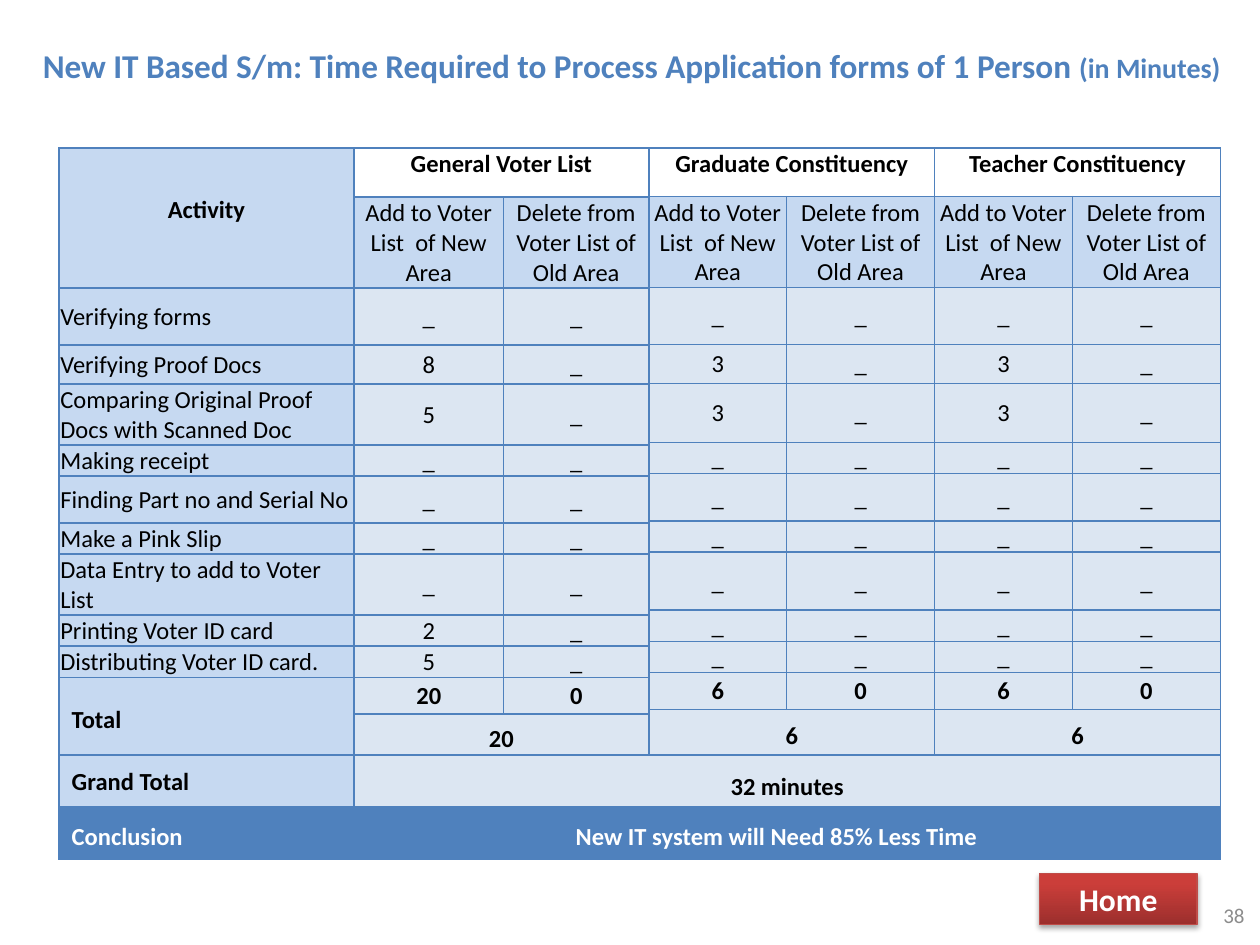
import pptx
import pptx.util
import pptx.dml.color
import pptx.enum.shapes
import pptx.enum.text
import pptx.oxml
import pptx.oxml.ns

Pt = pptx.util.Pt
ALIGN = pptx.enum.text.PP_ALIGN
ANCHOR = pptx.enum.text.MSO_ANCHOR

COLORS = {"blue": "4F81BD", "label": "C6D9F1", "value": "DCE6F2", "white": "FFFFFF",
          "black": "000000", "grey": "8C8C8C", "red_dark": "9C2F2D",
          "red": "CB3E3A", "red_line": "BF4C48"}

TITLE = [("New IT Based S/m: Time Required to Process Application forms of 1 Person ", 19),
         ("(in Minutes)", 16)]
SUBHEADS = ["Add to Voter List  of New Area", "Delete from Voter List of Old Area"]
ACTIVITIES = ["Verifying forms", "Verifying Proof Docs",
              "Comparing Original Proof Docs with Scanned Doc", "Making receipt",
              "Finding Part no and Serial No", "Make a Pink Slip",
              "Data Entry to add to Voter List", "Printing Voter ID card",
              "Distributing Voter ID card."]
# name, minutes to add per activity, totals (add, delete, both)
GROUPS = [("General Voter List", "_85____25", ("20", "0", "20")),
          ("Graduate Constituency", "_33______", ("6", "0", "6")),
          ("Teacher Constituency", "_33______", ("6", "0", "6"))]
NO_TIME = "_"

LEFT, TOP, LABEL_W = 33.8, 84.6, 168.5
GROUP_COLS = [(85.5, 83), (78.7, 84.6), (78.7, 84.6)]
GENERAL_ROWS = [28, 52, 32.5, 22.3, 34.9, 17.8, 26.8, 17.8, 34.9, 17.8, 17.8, 21.1, 23.1]
OTHER_ROWS = [27.7, 52, 32.5, 22.3, 33.7, 17.8, 27.2, 17.8, 33.2, 17.8, 17.8, 21.1, 26]
SUMMARY_TOP, SUMMARY_H = 431.4, 29.7


def rgb(name):
    return pptx.dml.color.RGBColor.from_string(COLORS[name])


def style_runs(p, size, color, bold):
    for r in p.runs:
        r.font.name, r.font.size, r.font.bold = "Calibri", Pt(size), bold
        r.font.color.rgb = rgb(color)


def add_plain_table(s, x, y, cols, rows):
    shape = s.shapes.add_table(len(rows), len(cols), Pt(x), Pt(y), Pt(sum(cols)), Pt(sum(rows)))
    table = shape.table
    table.first_row = table.horz_banding = False
    for column, width in zip(table.columns, cols):
        column.width = Pt(width)
    for row, height in zip(table.rows, rows):
        row.height = Pt(height)
    return table


def add_borders(cell):
    """Put the four border lines before the fill, as the schema asks."""
    for i, side in enumerate(("lnL", "lnR", "lnT", "lnB")):
        cell._tc.get_or_add_tcPr().insert(i, pptx.oxml.parse_xml(
            f'<a:{side} {pptx.oxml.ns.nsdecls("a")} w="12700"><a:solidFill>'
            f'<a:srgbClr val="{COLORS["blue"]}"/></a:solidFill></a:{side}>'))


def fill_cell(cell, text, fill, bold=False, align=ALIGN.CENTER, anchor=ANCHOR.MIDDLE,
              color="black", margins=(0.7, 0.7, 0.7, 0)):
    """Margins run left, top, right, bottom."""
    cell.margin_left, cell.margin_top, cell.margin_right, cell.margin_bottom = map(Pt, margins)
    cell.vertical_anchor = anchor
    cell.fill.solid()
    cell.fill.fore_color.rgb = rgb(fill)
    add_borders(cell)
    p = cell.text_frame.paragraphs[0]
    p.text, p.alignment = text, align
    style_runs(p, 14, color, bold)


def fill_group(table, first, name, minutes, totals):
    """Fill the two columns of one voter list, starting at column first."""
    last = len(table.rows) - 1
    for row in (0, last):
        table.cell(row, first).merge(table.cell(row, first + 1))
    for c in (first, first + 1):
        fill_cell(table.cell(0, c), name if c == first else "", "white", True, anchor=ANCHOR.TOP)
        fill_cell(table.cell(last, c), totals[2] if c == first else "", "value", True,
                  margins=(0.7, 5, 0.7, 0))
        fill_cell(table.cell(1, c), SUBHEADS[c - first], "label")
        for row, minute in enumerate(minutes, 2):
            fill_cell(table.cell(row, c), minute if c == first else NO_TIME, "value")
        fill_cell(table.cell(last - 1, c), totals[c - first], "value", True)


def fill_labels(table):
    last = len(table.rows) - 1
    for row, text, align, margins in [(0, "Activity", ALIGN.CENTER, (0.7, 0.7, 0.7, 10)),
                                      (last - 1, "Total", ALIGN.LEFT, (7.2, 5, 0.7, 0))]:
        table.cell(row, 0).merge(table.cell(row + 1, 0))
        fill_cell(table.cell(row, 0), text, "label", True, align, margins=margins)
        fill_cell(table.cell(row + 1, 0), "", "label")
    for row, activity in enumerate(ACTIVITIES, 2):
        fill_cell(table.cell(row, 0), activity, "label", align=ALIGN.LEFT)


def add_voter_tables(s):
    x = LEFT
    for i, (group, cols) in enumerate(zip(GROUPS, GROUP_COLS)):
        widths = cols if i else (LABEL_W, *cols)
        table = add_plain_table(s, x, TOP, widths, OTHER_ROWS if i else GENERAL_ROWS)
        if i == 0:
            fill_labels(table)
        fill_group(table, len(widths) - 2, *group)
        x += sum(widths)
    return x - LEFT


def add_summary(s, width):
    table = add_plain_table(s, LEFT, SUMMARY_TOP, (LABEL_W, width - LABEL_W), [SUMMARY_H])
    fill_cell(table.cell(0, 0), "Grand Total", "label", True, ALIGN.LEFT, ANCHOR.TOP,
              margins=(7.2, 7, 7.2, 0))
    fill_cell(table.cell(0, 1), "32 minutes", "value", True, anchor=ANCHOR.TOP,
              margins=(7.2, 9.7, 7.2, 0))

    table = add_plain_table(s, LEFT, SUMMARY_TOP + SUMMARY_H, [width], [SUMMARY_H])
    cell = table.cell(0, 0)
    fill_cell(cell, "Conclusion\tNew IT system will Need 85% Less Time", "blue", True,
              ALIGN.LEFT, ANCHOR.TOP, "white", (7.2, 8.6, 7.2, 0))
    cell.text_frame.paragraphs[0]._p.get_or_add_pPr().append(pptx.oxml.parse_xml(
        f'<a:tabLst {pptx.oxml.ns.nsdecls("a")}><a:tab pos="{Pt(288)}" algn="l"/></a:tabLst>'))


def add_text(s, box, runs, color, bold, align, anchor, side_margin):
    tf = s.shapes.add_textbox(*map(Pt, box)).text_frame
    tf.word_wrap, tf.vertical_anchor = True, anchor
    tf.margin_left = tf.margin_right = Pt(side_margin)
    p = tf.paragraphs[0]
    p.alignment = align
    for text, size in runs:
        r = p.add_run()
        r.text = text
        r.font.name, r.font.size, r.font.bold = "Calibri", Pt(size), bold
        r.font.color.rgb = rgb(color)


def add_home_button(s):
    sp = s.shapes.add_shape(pptx.enum.shapes.MSO_SHAPE.RECTANGLE,
                            Pt(594), Pt(499), Pt(90), Pt(29.1))
    sp.fill.gradient()
    sp.fill.gradient_angle = 90
    for stop, color, position in zip(sp.fill.gradient_stops, ("red_dark", "red"), (0, 0.8)):
        stop.color.rgb, stop.position = rgb(color), position
    sp.line.color.rgb, sp.line.width = rgb("red_line"), Pt(0.75)
    sp.shadow.inherit = False
    effects = sp._element.spPr.find(pptx.oxml.ns.qn("a:effectLst"))
    effects.append(pptx.oxml.parse_xml(
        f'<a:outerShdw {pptx.oxml.ns.nsdecls("a")} blurRad="{Pt(3.1)}" dist="{Pt(1.8)}" '
        'dir="5400000" rotWithShape="0"><a:srgbClr val="000000"><a:alpha val="35000"/>'
        '</a:srgbClr></a:outerShdw>'))
    tf = sp.text_frame
    tf.text, tf.vertical_anchor = "Home", ANCHOR.MIDDLE
    tf.paragraphs[0].alignment = ALIGN.CENTER
    style_runs(tf.paragraphs[0], 18, "white", True)


def main():
    prs = pptx.Presentation()
    prs.slide_width, prs.slide_height = Pt(720), Pt(540)
    s = prs.slides.add_slide(prs.slide_layouts[6])
    width = add_voter_tables(s)
    add_summary(s, width)
    add_home_button(s)
    add_text(s, (692, 506, 28, 34), [("38", 12)], "grey", False, ALIGN.LEFT, ANCHOR.MIDDLE, 7.2)
    add_text(s, (15, 22.3, 692, 30.4), TITLE, "blue", True, ALIGN.CENTER, ANCHOR.TOP, 0)
    prs.save("out.pptx")


if __name__ == "__main__":
    main()
